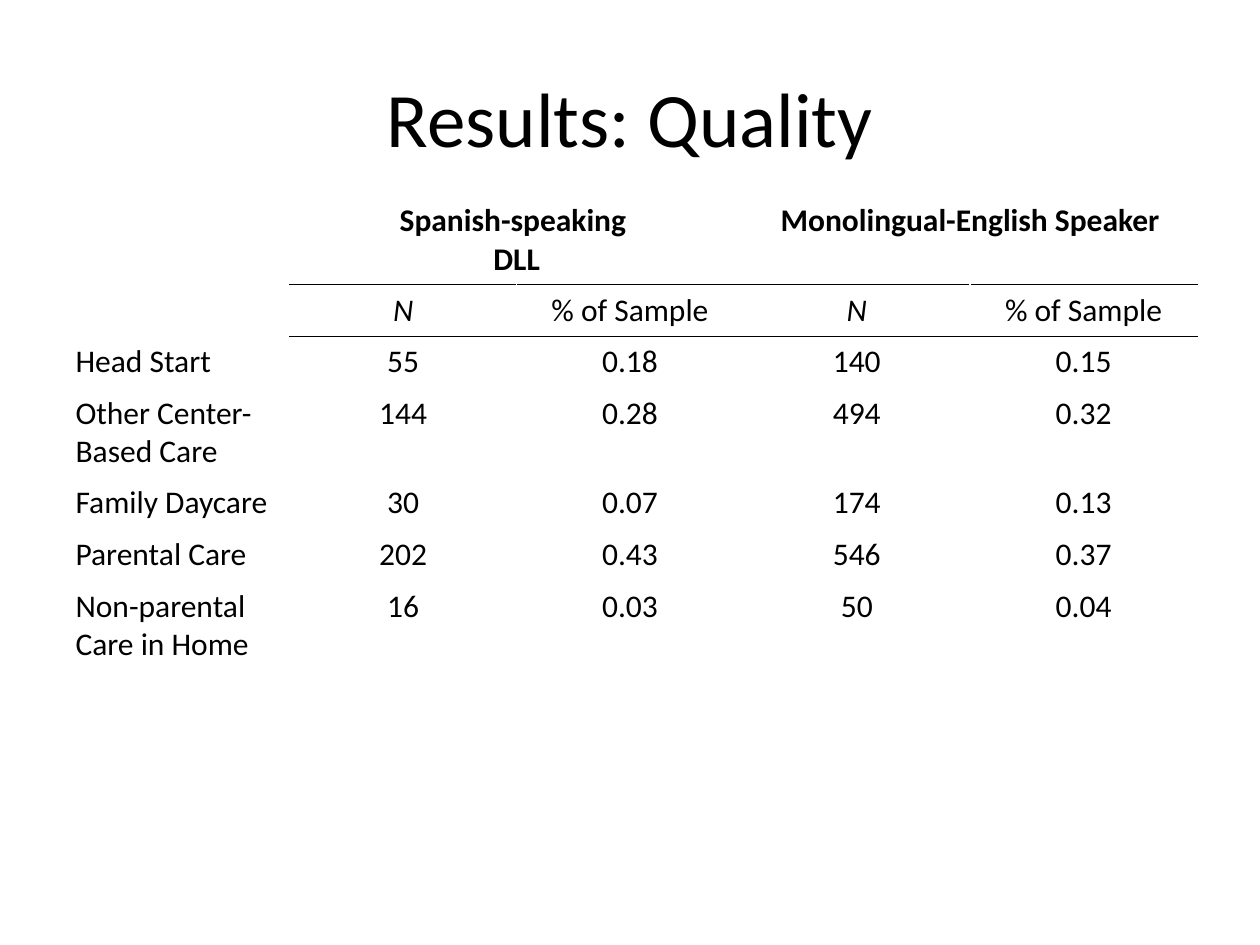
"""Build the "Results: Quality" slide with its child care table."""
import dataclasses

import pptx
import pptx.dml.color
import pptx.enum.text
import pptx.oxml
import pptx.oxml.ns
import pptx.util

Inches = pptx.util.Inches
Pt = pptx.util.Pt
Align = pptx.enum.text.PP_ALIGN

FONT = "Calibri"
BLACK = "000000"
WHITE = "FFFFFF"
ONE_LINE = 0.41
TWO_LINES = 0.71
COLUMN_WIDTH = 1.8


@dataclasses.dataclass(frozen=True)
class TableRow:
    texts: tuple[str, ...]
    height: float = ONE_LINE
    bold: bool = False
    rule_above: bool = False
    rule_below: bool = False


ROWS = (
    TableRow(("", "Spanish-speaking \nDLL", "", "Monolingual-English Speaker", ""),
             height=TWO_LINES, bold=True, rule_below=True),
    TableRow(("", "N", "% of Sample", "N", "% of Sample"), rule_above=True, rule_below=True),
    TableRow(("Head Start", "55", "0.18", "140", "0.15"), rule_above=True),
    TableRow(("Other Center- Based Care", "144", "0.28", "494", "0.32"), height=TWO_LINES),
    TableRow(("Family Daycare", "30", "0.07", "174", "0.13")),
    TableRow(("Parental Care", "202", "0.43", "546", "0.37")),
    TableRow(("Non-parental Care in Home", "16", "0.03", "50", "0.04"), height=TWO_LINES),
)


def color(value: str) -> pptx.dml.color.RGBColor:
    return pptx.dml.color.RGBColor.from_string(value)


def write_text(frame, text: str, size: float, alignment, bold=False, italic=False) -> None:
    for index, line in enumerate(text.split("\n")):
        paragraph = frame.add_paragraph() if index else frame.paragraphs[0]
        paragraph.alignment = alignment
        run = paragraph.add_run()
        run.text = line
        run.font.name = FONT
        run.font.size = Pt(size)
        run.font.bold = bold
        run.font.italic = italic
        run.font.color.rgb = color(BLACK)


def add_rule(cell, side: str) -> None:
    cell._tc.get_or_add_tcPr().append(pptx.oxml.parse_xml(
        f'<a:ln{side} {pptx.oxml.ns.nsdecls("a")} w="{Pt(1)}"><a:solidFill>'
        f'<a:srgbClr val="{BLACK}"/></a:solidFill></a:ln{side}>'))


def fill_cell(cell, row: TableRow, column: int) -> None:
    if column and row.rule_above:
        add_rule(cell, "T")
    if column and row.rule_below:
        add_rule(cell, "B")
    cell.fill.solid()
    cell.fill.fore_color.rgb = color(WHITE)
    text = row.texts[column]
    if text:
        alignment = Align.CENTER if column else Align.LEFT
        write_text(cell.text_frame, text, 18, alignment, row.bold, text == "N")


def add_title(slide, text: str) -> None:
    shape = slide.shapes.add_textbox(Inches(0.5), Inches(0.3), Inches(9), Inches(1.25))
    frame = shape.text_frame
    frame.word_wrap = True
    frame.vertical_anchor = pptx.enum.text.MSO_ANCHOR.MIDDLE
    write_text(frame, text, 44, Align.CENTER)


def add_results_table(slide, rows: tuple[TableRow, ...]) -> None:
    column_count = len(rows[0].texts)
    table = slide.shapes.add_table(
        len(rows), column_count, Inches(0.5), Inches(1.55),
        Inches(COLUMN_WIDTH * column_count), Inches(sum(row.height for row in rows))).table
    table.first_row = False
    table.horz_banding = False
    for column in table.columns:
        column.width = Inches(COLUMN_WIDTH)
    for first in (1, 3):
        table.cell(0, first).merge(table.cell(0, first + 1))
    for index, row in enumerate(rows):
        table.rows[index].height = Inches(row.height)
        for column in range(column_count):
            fill_cell(table.cell(index, column), row, column)


def main() -> None:
    presentation = pptx.Presentation()
    presentation.slide_width = Inches(10)
    presentation.slide_height = Inches(7.5)
    slide = presentation.slides.add_slide(presentation.slide_layouts[6])
    add_title(slide, "Results: Quality")
    add_results_table(slide, ROWS)
    presentation.save("out.pptx")


if __name__ == "__main__":
    main()
